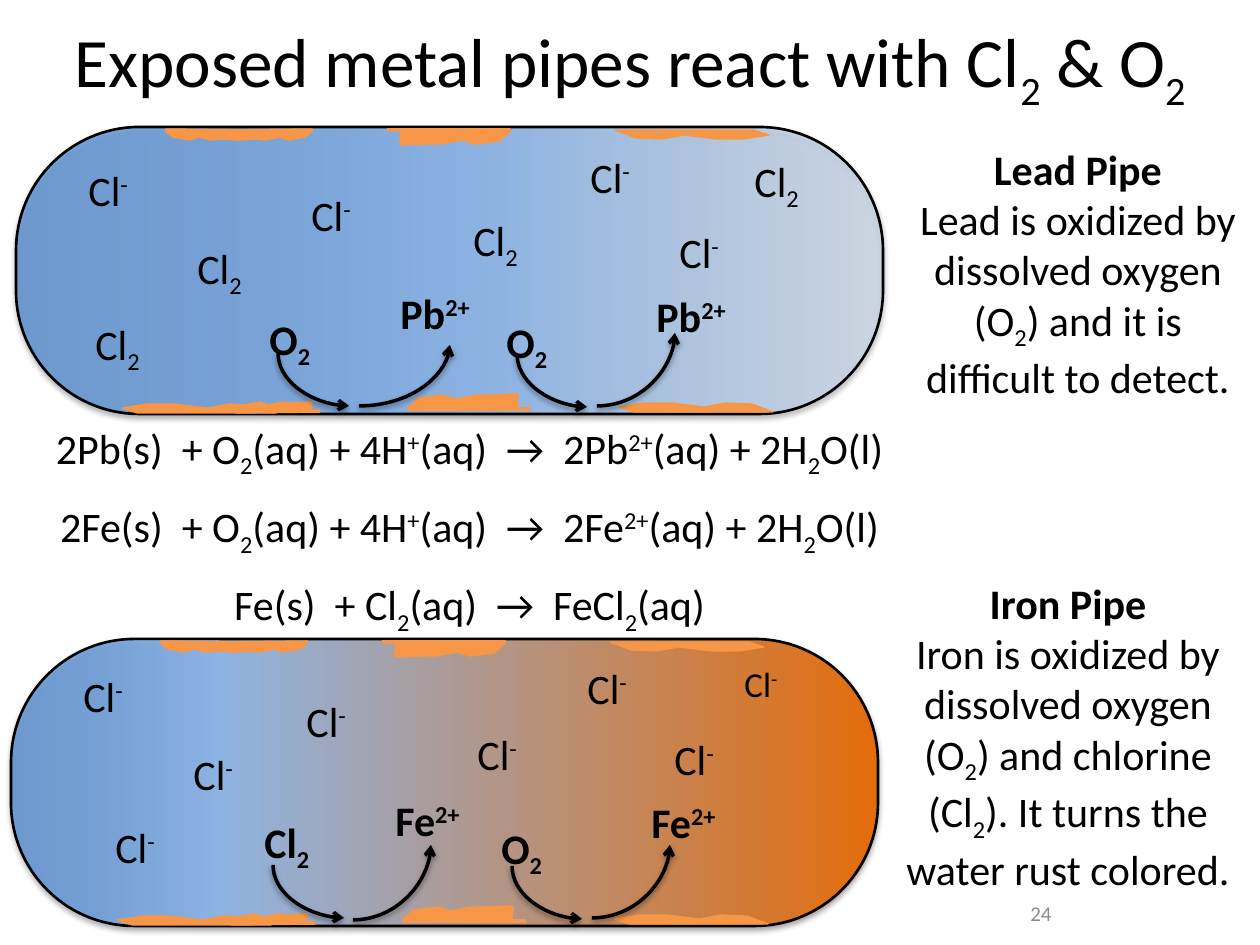
import dataclasses

import lxml.etree
import pptx
import pptx.dml.color
import pptx.enum.shapes
import pptx.enum.text
import pptx.oxml.ns
import pptx.util

PX = 914400 // 126
ALIGN = pptx.enum.text.PP_ALIGN
ANCHOR = pptx.enum.text.MSO_ANCHOR


@dataclasses.dataclass(frozen=True)
class Theme:
    font: str = "Calibri"
    ink: str = "000000"
    grey: str = "8C8C8C"
    rust: str = "F79646"
    title: float = 39.6
    body: int = 24
    small: int = 20
    number: int = 12


THEME = Theme()

# In all wording "|" parts the runs; a run that starts with _ is lowered, with ^ raised.
TITLE = "Exposed metal pipes react with Cl|_2| & O|_2"
EQUATIONS = [
    "2Pb(s)  + O|_2|(aq) + 4H|^+|(aq)  →  2Pb|^2+|(aq) + 2H|_2|O(l)",
    "2Fe(s)  + O|_2|(aq) + 4H|^+|(aq)  →  2Fe|^2+|(aq) + 2H|_2|O(l)",
    "Fe(s)  + Cl|_2|(aq)  →  FeCl|_2|(aq)",
]
CHLORIDE, CHLORINE, OXYGEN, LEAD, IRON = "Cl|^-", "Cl|_2", "O|_2", "Pb|^2+", "Fe|^2+"

# Inside a pipe every position counts from its top left corner.
PIPE_SIZE = (867, 287)
PIPES = [
    dict(
        at=(16, 127),
        stops=[(0, "558ED5", 75), (55, "8EB4E3", 100), (100, "C6D9F1", 50)],
        reacting=[(OXYGEN, 241, 180, 102), (LEAD, 372, 154, 123),
                  (OXYGEN, 478, 183, 102), (LEAD, 628, 157, 159)],
        dissolved=[(CHLORIDE, 283, 56, 102), (CHLORIDE, 651, 93, 102),
                   (CHLORIDE, 60, 31, 71), (CHLORINE, 169, 109, 102),
                   (CHLORIDE, 562, 18, 71), (CHLORINE, 445, 81, 102),
                   (CHLORINE, 726, 22, 108), (CHLORINE, 67, 185, 129)],
        faint=[],
        first_rise=(343, 279, 434, 218),
        note=(899, 137, 358, 267),
        wording=["Lead Pipe",
                 "Lead is oxidized by dissolved oxygen (O|_2|) and it is difficult to detect."],
    ),
    dict(
        at=(11, 639),
        stops=[(0, "558ED5", 75), (24, "8EB4E3", 100), (100, "E46C0A", 100)],
        reacting=[(CHLORINE, 241, 171, 152), (IRON, 372, 149, 213),
                  (OXYGEN, 478, 177, 152), (IRON, 628, 151, 213)],
        dissolved=[(CHLORIDE, 283, 50, 152), (CHLORIDE, 454, 83, 152),
                   (CHLORIDE, 651, 88, 152), (CHLORIDE, 60, 25, 152),
                   (CHLORIDE, 92, 176, 152), (CHLORIDE, 170, 103, 152),
                   (CHLORIDE, 564, 17, 71)],
        faint=[(CHLORIDE, 721, 17, 71)],
        first_rise=(342, 281, 420, 206),
        note=(889, 571, 358, 318),
        wording=["Iron Pipe",
                 "Iron is oxidized by dissolved oxygen (O|_2|) and chlorine (Cl|_2|). "
                 "It turns the water rust colored."],
    ),
]
FALLS = [(262, 226, 333, 279), (501, 227, 571, 280)]
SECOND_RISE = (581, 279, 659, 206)

# Outline points, whether the outline is closed, line width
CHUNK = ([(0, 0), (123, 0), (112, 10), (88, 13), (76, 9), (54, 13), (43, 13), (14, 14),
          (15, 0)], False, 2)
LONG = ([(0, 0), (21, 8), (47, 9), (69, 5), (101, 9), (129, 9), (154, 5), (139, 0)],
        True, 0.75)
SHORT = ([(0, 1), (84, 0), (77, 6), (60, 9), (52, 6), (37, 9), (29, 8), (9, 9), (10, 0)],
         False, 2)
SHORT_MIRRORED = ([(84 - x, y) for x, y in SHORT[0]], False, 2)
TOP_RUST = [(CHUNK, 371, 3), (LONG, 599, 3), (SHORT_MIRRORED, 150, 3), (SHORT, 212, 3)]
BOTTOM_RUST = [(CHUNK, 392, 268), (LONG, 603, 276), (SHORT, 220, 276), (LONG, 106, 277)]


def rgb(value):
    return pptx.dml.color.RGBColor.from_string(value)


def add_node(parent, tag, **attributes):
    node = lxml.etree.SubElement(parent, pptx.oxml.ns.qn(tag))
    for key, value in attributes.items():
        node.set(key, str(value))
    return node


def add_colour(parent, value, opacity):
    colour = add_node(parent, "a:srgbClr", val=value)
    if opacity < 100:
        add_node(colour, "a:alpha", val=opacity * 1000)


def add_shadow(properties, distance, opacity):
    effects = add_node(properties, "a:effectLst")
    shadow = add_node(effects, "a:outerShdw", blurRad=40000, dist=distance,
                      dir=5400000, rotWithShape=0)
    add_colour(shadow, THEME.ink, opacity)


def add_text(page, area, lines, size=THEME.body, colour=THEME.ink, align=ALIGN.LEFT,
             anchor=ANCHOR.TOP, bold_lines=0, space_after=0):
    box = page.shapes.add_textbox(*(value * PX for value in area))
    frame = box.text_frame
    frame.word_wrap = True
    frame.vertical_anchor = anchor
    for index, line in enumerate(lines):
        para = frame.paragraphs[0] if index == 0 else frame.add_paragraph()
        para.alignment = align
        para.space_after = pptx.util.Pt(space_after)
        for piece in line.split("|"):
            span = para.add_run()
            span.text = piece.lstrip("_^")
            span.font.name = THEME.font
            span.font.size = pptx.util.Pt(size)
            span.font.bold = index < bold_lines
            span.font.color.rgb = rgb(colour)
            if piece[0] in "_^":
                shift = -25000 if piece[0] == "_" else 30000
                span._r.get_or_add_rPr().set("baseline", str(shift))


def add_pipe(page, at, stops):
    area = (*at, *PIPE_SIZE)
    pipe = page.shapes.add_shape(pptx.enum.shapes.MSO_SHAPE.ROUNDED_RECTANGLE,
                                 *(value * PX for value in area))
    pipe.adjustments[0] = 0.43
    pipe.fill.gradient()
    pipe.fill.gradient_angle = 0
    properties = pipe._element.spPr
    stop_list = properties.find(".//" + pptx.oxml.ns.qn("a:gsLst"))
    stop_list.clear()
    for position, colour, opacity in stops:
        add_colour(add_node(stop_list, "a:gs", pos=position * 1000), colour, opacity)
    pipe.line.color.rgb = rgb(THEME.ink)
    pipe.line.width = pptx.util.Pt(1.5)
    add_shadow(properties, 23000, 35)


def add_rust(page, patch, left, top, rotation):
    points, closed, width = patch
    points = [(left + x, top + y) for x, y in points]
    builder = page.shapes.build_freeform(*points[0], scale=PX)
    builder.add_line_segments(points[1:], close=closed)
    rust = builder.convert_to_shape()
    rust.rotation = rotation
    rust.shadow.inherit = False
    rust.fill.solid()
    rust.fill.fore_color.rgb = rust.line.color.rgb = rgb(THEME.rust)
    rust.line.width = pptx.util.Pt(width)


def add_arrow(page, x1, y1, x2, y2, falling):
    """A quarter curve; a falling one is a level curve turned by 270 degrees."""
    if falling:
        middle_x, middle_y = (x1 + x2) / 2, (y1 + y2) / 2
        half_width, half_height = (y2 - y1) / 2, (x2 - x1) / 2
        x1, x2 = middle_x + half_width, middle_x - half_width
        y1, y2 = middle_y - half_height, middle_y + half_height
    arrow = page.shapes.add_connector(pptx.enum.shapes.MSO_CONNECTOR.CURVE,
                                      *(int(value * PX) for value in (x1, y1, x2, y2)))
    properties = arrow._element.spPr
    properties.find(pptx.oxml.ns.qn("a:prstGeom")).set("prst", "curvedConnector2")
    if falling:
        properties.find(pptx.oxml.ns.qn("a:xfrm")).set("rot", "16200000")
    arrow.line.color.rgb = rgb(THEME.ink)
    arrow.line.width = pptx.util.Pt(2)
    add_node(properties.find(pptx.oxml.ns.qn("a:ln")), "a:tailEnd", type="arrow")
    add_shadow(properties, 20000, 38)


def draw_pipe(page, pipe):
    left, top = pipe["at"]
    add_pipe(page, pipe["at"], pipe["stops"])
    for patches, rotation in ((TOP_RUST, 0), (BOTTOM_RUST, 180)):
        for patch, x, y in patches:
            add_rust(page, patch, left + x, top + y, rotation)
    for group, size, bold_lines in (("reacting", THEME.body, 1), ("dissolved", THEME.body, 0),
                                    ("faint", THEME.small, 0)):
        for formula, x, y, width in pipe[group]:
            add_text(page, (left + x, top + y, width, 63 if size == THEME.body else 55),
                     [formula], size, bold_lines=bold_lines)
    for arrows, falling in ((FALLS, True), ([pipe["first_rise"], SECOND_RISE], False)):
        for x1, y1, x2, y2 in arrows:
            add_arrow(page, left + x1, top + y1, left + x2, top + y2, falling)
    add_text(page, pipe["note"], pipe["wording"], align=ALIGN.CENTER, bold_lines=1)


def main():
    deck = pptx.Presentation()
    deck.slide_width, deck.slide_height = 1260 * PX, 945 * PX
    page = deck.slides.add_slide(deck.slide_layouts[6])
    add_text(page, (0, 3, 1260, 126), [TITLE], THEME.title, align=ALIGN.CENTER,
             anchor=ANCHOR.MIDDLE)
    add_text(page, (770, 893, 294, 40), ["24"], THEME.number, THEME.grey, ALIGN.RIGHT,
             ANCHOR.MIDDLE)
    add_text(page, (-160, 416, 1259, 208), EQUATIONS, align=ALIGN.CENTER, space_after=12)
    for pipe in PIPES:
        draw_pipe(page, pipe)
    deck.save("out.pptx")


if __name__ == "__main__":
    main()
